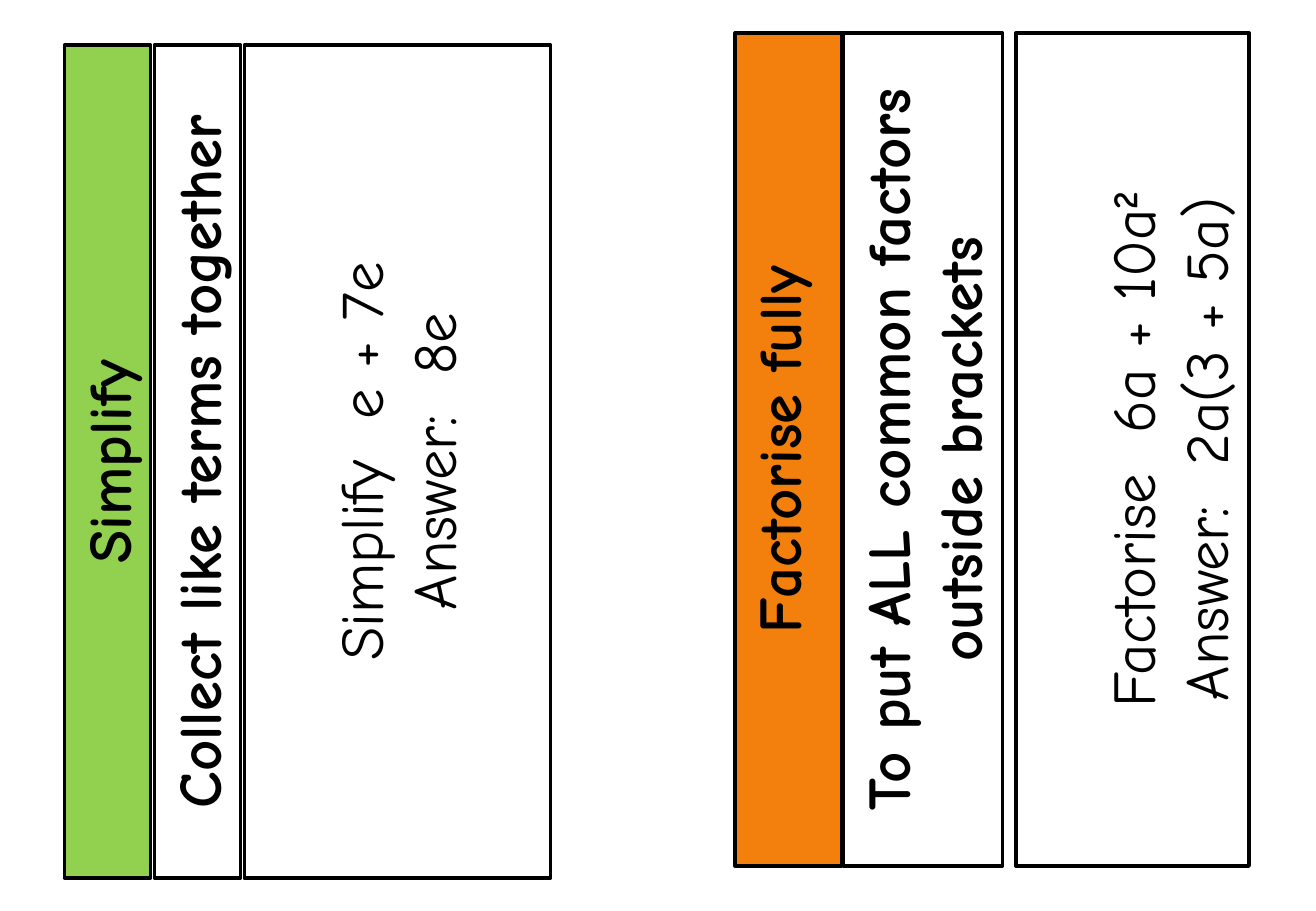
import pptx
import pptx.util
import pptx.dml.color
import pptx.enum.shapes
import pptx.enum.text

Inches, Pt = pptx.util.Inches, pptx.util.Pt
RGB = pptx.dml.color.RGBColor.from_string

theme = {
    "font": "Comic Neue", "size": Pt(36), "edge": Pt(2),
    "ink": RGB("000000"), "paper": RGB("FFFFFF"),
    "green": RGB("92D050"), "orange": RGB("F3800D"),
}
LONG = 6.86   # length of every strip, read sideways
PAD = 0.05    # inset above the first line
LINE = 0.6    # height of one text line

deck = pptx.Presentation()
deck.slide_width, deck.slide_height = Inches(10.83), Inches(7.5)
slide = deck.slides.add_slide(deck.slide_layouts[6])


def strip(card, left, mid, depth, fill, lines, bold, skip=0):
    """Add a strip turned a quarter left; left and depth are as seen on the slide."""
    x = left + depth / 2 - LONG / 2
    y = mid - depth / 2
    box = card.shapes.add_shape(
        pptx.enum.shapes.MSO_SHAPE.RECTANGLE,
        Inches(x), Inches(y), Inches(LONG), Inches(depth))
    box.rotation = 270
    box.shadow.inherit = False
    box.fill.solid()
    box.fill.fore_color.rgb = theme[fill]
    box.line.color.rgb = theme["ink"]
    box.line.width = theme["edge"]

    frame = box.text_frame
    layout = {
        "word_wrap": True,
        "vertical_anchor": pptx.enum.text.MSO_ANCHOR.TOP,
        "margin_top": Inches(PAD + skip * LINE),
        "margin_bottom": Inches(PAD),
    }
    for name, value in layout.items():
        setattr(frame, name, value)

    style = {"name": theme["font"], "size": theme["size"], "bold": bold}
    for i, line in enumerate(lines):
        para = frame.add_paragraph() if i else frame.paragraphs[0]
        para.alignment = pptx.enum.text.PP_ALIGN.CENTER
        # A caret splits the base from its raised power
        for n, part in enumerate(line.split("^")):
            run = para.add_run()
            run.text = part
            for name, value in style.items():
                setattr(run.font, name, value)
            run.font.color.rgb = theme["ink"]
            if n:
                run.font.bold = True
                run.font._element.set("baseline", "30000")


# Each card: middle height, then (left, depth, fill, text) for title, rule, example
cards = [
    (3.8, [
        (0.53, 0.71, "green", ["Simplify"]),
        (1.27, 0.71, "paper", ["Collect like terms together"]),
        (2.01, 2.52, "paper", ["Simplify  e + 7e", "Answer:  8e"]),
    ]),
    (3.7, [
        (6.05, 0.88, "orange", ["Factorise fully"]),
        (6.94, 1.31, "paper", ["To put ALL common factors outside brackets"]),
        (8.36, 1.92, "paper", ["Factorise  6a + 10a^2", "Answer:  2a(3 + 5a)"]),
    ]),
]

for mid, strips in cards:
    card = slide.shapes.add_group_shape()
    for left, depth, fill, lines in strips:
        sample = len(lines) > 1   # worked examples are light and start one line down
        strip(card, left, mid, depth, fill, lines, not sample, int(sample))

deck.save("out.pptx")
